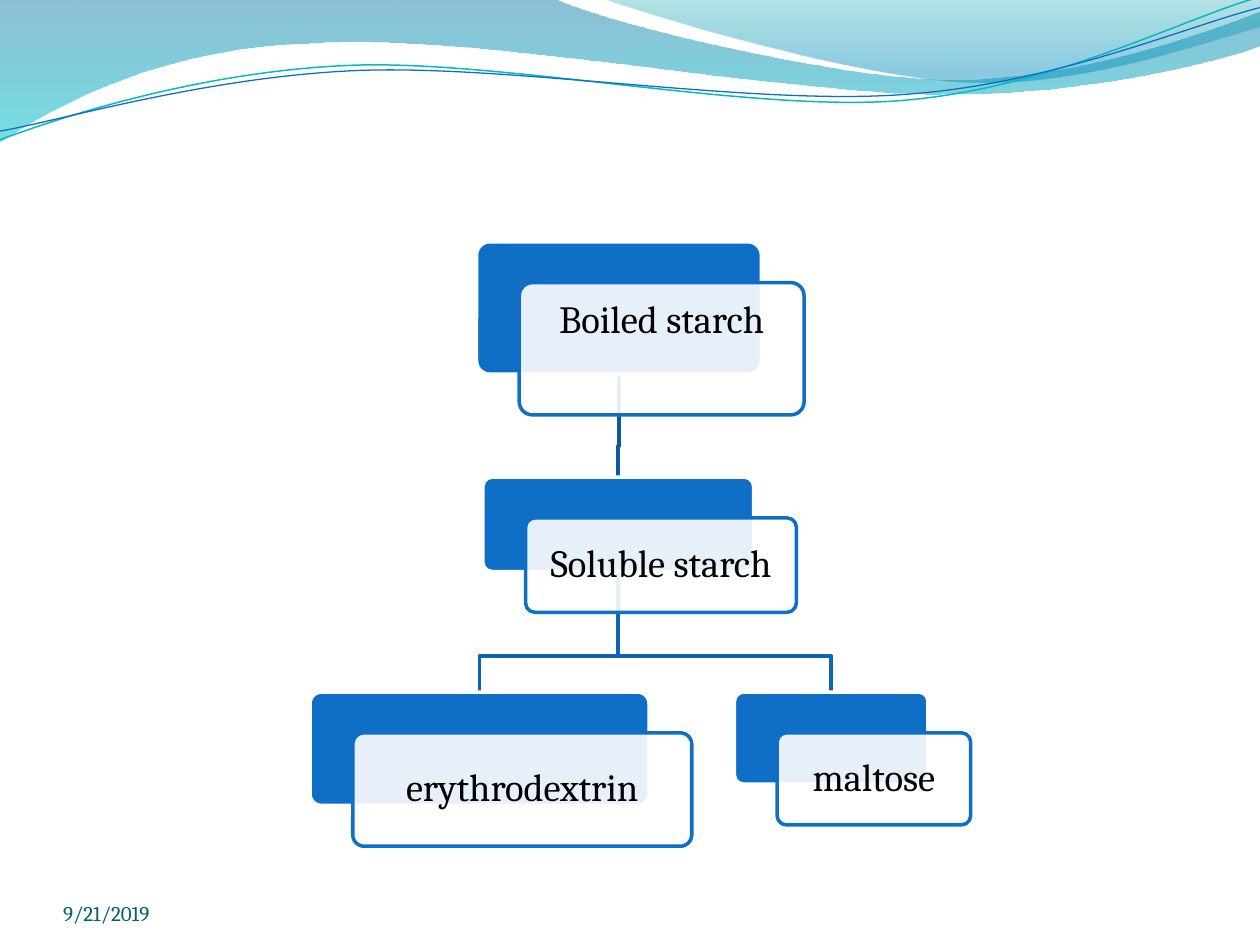
from dataclasses import dataclass

import lxml.etree
import pptx
import pptx.dml.color
import pptx.enum.shapes
import pptx.enum.text
import pptx.oxml.ns
import pptx.util

Pt = pptx.util.Pt
RGB = pptx.dml.color.RGBColor
qn = pptx.oxml.ns.qn
Point = tuple[float, float]

BLUE = RGB(0x0F, 0x6F, 0xC6)
TEAL = RGB(0x0A, 0xB8, 0xBF)
LINK_UPPER = RGB(0x0C, 0x59, 0x9F)
LINK_LOWER = RGB(0x0E, 0x65, 0xB4)
WHITE = RGB(0xFF, 0xFF, 0xFF)
BLACK = RGB(0, 0, 0)
DATE_COLOR = RGB(0x04, 0x5D, 0x75)
FONT = "Cambria"
FRONT_DX, FRONT_DY = 24.4, 23.3
INSET = 6.5
BEND_RATIO = 0.7  # share of the gap above the bend of a link


@dataclass
class Stop:
    position: float
    color: RGB
    opacity: int


@dataclass
class Wave:
    """Each step holds one point (straight) or three (Bezier curve)."""
    start: Point
    steps: list[tuple[Point, ...]]
    stops: tuple[Stop, ...] = ()
    color: RGB | None = None
    width: float = 0


@dataclass
class Card:
    text: str
    left: float
    top: float
    width: float
    height: float
    raise_text: float = 0

    @property
    def center(self) -> float:
        return self.left + self.width / 2

    @property
    def bottom(self) -> float:
        return self.top + self.height


WAVES = [
    Wave((0, 0), [((316.8, -0.7),),
                  ((342.7, 12.2), (478.1, 45.4), (545.8, 45.4)),
                  ((614.2, 45.4), (689.8, 18.7), (720, 6.5)),
                  ((720.7, 25.9),),
                  ((707.8, 31.7), (626.4, 54.7), (537.1, 54)),
                  ((447.8, 54), (275, 20.2), (185, 24.5)),
                  ((92.9, 25.9), (33.1, 59.8), (-0.7, 81.4))],
         stops=(Stop(0, RGB(0x00, 0x74, 0xA1), 45), Stop(1, RGB(0x00, 0xC6, 0xCF), 55))),
    Wave((344.9, -0.7), [((366.5, 7.9), (491, 44.6), (553.7, 46.8)),
                         ((616.3, 49.7), (691.9, 23), (720, 15.1)),
                         ((720, 0),)],
         stops=(Stop(0, RGB(0x00, 0xA1, 0xA9), 30), Stop(0.8, RGB(0x00, 0x8B, 0xBF), 45))),
    Wave((0, 79.9), [((34.6, 67), (113.8, 41), (199.4, 37.4)),
                     ((284.4, 33.8), (427, 64.1), (513.4, 57.6)),
                     ((599.8, 51.1), (675.4, 10.8), (718.6, -1.4))],
         color=TEAL, width=0.85),
    Wave((0, 74.9), [((33.8, 69.1), (118.1, 43.9), (203.8, 40.3)),
                     ((290.2, 36.7), (429.8, 60.5), (516.2, 54)),
                     ((601.9, 48.2), (677.5, 15.1), (720, 4.3))],
         color=BLUE, width=0.75),
]

BOILED = Card("Boiled starch", 272.3, 138.2, 162.8, 75.6, raise_text=15.8)
SOLUBLE = Card("Soluble starch", 275.9, 272.6, 154.8, 54)
ERYTHRODEXTRIN = Card("erythrodextrin", 177.2, 395.5, 193.7, 64.8)
MALTOSE = Card("maltose", 419.7, 395.5, 110.6, 52.6)
CARDS = [BOILED, SOLUBLE, ERYTHRODEXTRIN, MALTOSE]


def set_opacity(color_element, percent: int) -> None:
    alpha = lxml.etree.SubElement(color_element, qn("a:alpha"))
    alpha.set("val", str(percent * 1000))


def set_line(shape, color: RGB, width: float) -> None:
    shape.line.color.rgb = color
    shape.line.width = Pt(width)


def draw_outline(slide, start: Point, steps: list[tuple[Point, ...]], close: bool):
    builder = slide.shapes.build_freeform(Pt(start[0]), Pt(start[1]))
    builder.add_line_segments([(Pt(x), Pt(y)) for step in steps for x, y in step], close=close)
    outline = builder.convert_to_shape()
    outline.shadow.inherit = False

    # Merge each run of three segments that belongs to a curve
    segments = iter(list(outline._element.spPr.iter(qn("a:lnTo"))))
    for step in steps:
        parts = [next(segments) for _ in step]
        if len(parts) == 3:
            curve = lxml.etree.Element(qn("a:cubicBezTo"))
            parts[0].addprevious(curve)
            for part in parts:
                curve.append(part[0])
                part.getparent().remove(part)
    return outline


def draw_wave(slide, wave: Wave) -> None:
    outline = draw_outline(slide, wave.start, wave.steps, close=bool(wave.stops))
    if wave.color is not None:
        outline.fill.background()
        set_line(outline, wave.color, wave.width)
        return
    outline.line.fill.background()
    outline.fill.gradient()
    outline.fill.gradient_angle = 270
    for stop, wanted in zip(outline.fill.gradient_stops, wave.stops):
        stop.position = wanted.position
        stop.color.rgb = wanted.color
    for color, wanted in zip(outline._element.spPr.iter(qn("a:srgbClr")), wave.stops):
        set_opacity(color, wanted.opacity)


def draw_link(slide, parent: Card, child: Card, color: RGB) -> None:
    bend = parent.bottom + BEND_RATIO * (child.top - parent.bottom)
    link = draw_outline(slide, (parent.center, parent.bottom),
                        [((parent.center, bend),), ((child.center, bend),),
                         ((child.center, child.top),)], close=False)
    link.fill.background()
    set_line(link, color, 2)


def draw_panel(slide, card: Card, shift: Point, fill: RGB, line: RGB):
    panel = slide.shapes.add_shape(
        pptx.enum.shapes.MSO_SHAPE.ROUNDED_RECTANGLE, Pt(card.left + shift[0]),
        Pt(card.top + shift[1]), Pt(card.width), Pt(card.height))
    panel.adjustments[0] = 0.1
    panel.shadow.inherit = False
    panel.fill.solid()
    panel.fill.fore_color.rgb = fill
    set_line(panel, line, 2)
    return panel


def add_run(paragraph, text: str, size: float, color: RGB) -> None:
    run = paragraph.add_run()
    run.text = text
    run.font.name = FONT
    run.font.size = Pt(size)
    run.font.color.rgb = color


def draw_card(slide, card: Card) -> None:
    draw_panel(slide, card, (0, 0), BLUE, WHITE)
    front = draw_panel(slide, card, (FRONT_DX, FRONT_DY), WHITE, BLUE)
    set_opacity(front._element.spPr.find(qn("a:solidFill"))[0], 90)
    frame = front.text_frame
    frame.word_wrap = True
    frame.vertical_anchor = pptx.enum.text.MSO_ANCHOR.MIDDLE
    frame.margin_left = frame.margin_right = frame.margin_top = Pt(INSET)
    frame.margin_bottom = Pt(INSET + 2 * card.raise_text)
    label = frame.paragraphs[0]
    label.alignment = pptx.enum.text.PP_ALIGN.CENTER
    label.line_spacing = 0.9
    add_run(label, card.text, 22, BLACK)


def draw_date(slide, text: str) -> None:
    date = slide.shapes.add_textbox(Pt(36), Pt(500.4), Pt(168), Pt(28.8)).text_frame
    date.word_wrap = True
    date.vertical_anchor = pptx.enum.text.MSO_ANCHOR.BOTTOM
    date.margin_left = date.margin_right = date.margin_top = date.margin_bottom = 0
    add_run(date.paragraphs[0], text, 12, DATE_COLOR)


def main() -> None:
    deck = pptx.Presentation()
    deck.slide_width, deck.slide_height = Pt(720), Pt(540)
    slide = deck.slides.add_slide(deck.slide_layouts[6])

    # Decorative waves
    for wave in WAVES:
        draw_wave(slide, wave)

    # Hierarchy: links lie under the cards
    draw_link(slide, SOLUBLE, MALTOSE, LINK_LOWER)
    draw_link(slide, SOLUBLE, ERYTHRODEXTRIN, LINK_LOWER)
    draw_link(slide, BOILED, SOLUBLE, LINK_UPPER)
    for card in CARDS:
        draw_card(slide, card)

    # Footer
    draw_date(slide, "9/21/2019")
    deck.save("out.pptx")


if __name__ == "__main__":
    main()
